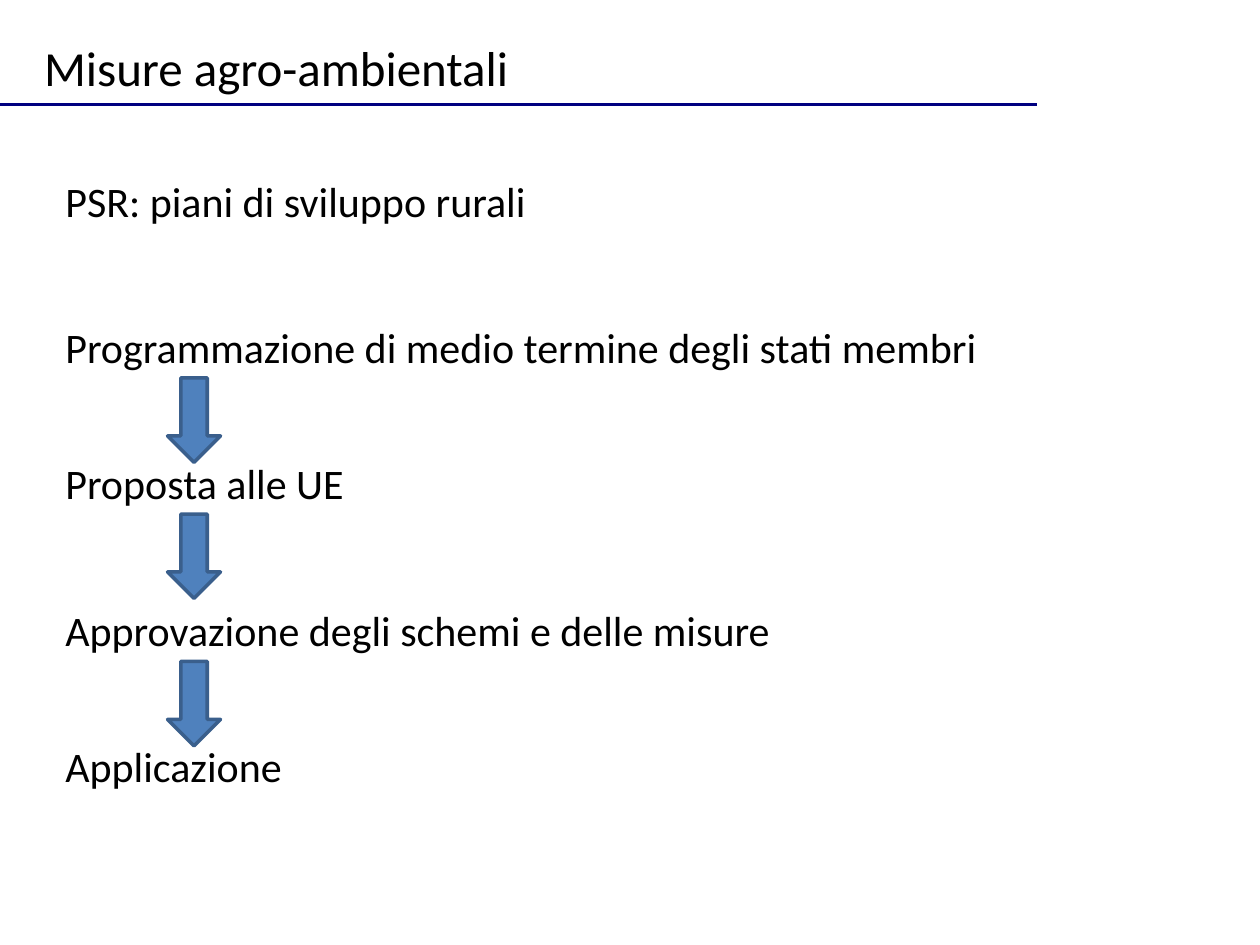
from lxml import etree
from pptx import Presentation
from pptx.dml.color import RGBColor
from pptx.enum.shapes import MSO_CONNECTOR, MSO_SHAPE
from pptx.enum.text import MSO_ANCHOR, PP_ALIGN
from pptx.oxml.ns import qn
from pptx.util import Inches, Pt

STRAIGHT = MSO_CONNECTOR.STRAIGHT
DOWN_ARROW = MSO_SHAPE.DOWN_ARROW
TOP = MSO_ANCHOR.TOP
LEFT = PP_ALIGN.LEFT

TITLE_ONLY_LAYOUT = 5
FONT = "Calibri"
COLOURS = {
    "text": "000000",
    "rule": "000080",
    "arrow": "4F81BD",
    "arrow_edge": "3A5F8C",
}
TEXT_LEFT = 0.42
TEXT_HEIGHT = 0.5
HEADING = ("PSR: piani di sviluppo rurali", 1.34, 8.75)
STEPS = [  # text, top, width
    ("Programmazione di medio termine degli stati membri", 2.5, 8.75),
    ("Proposta alle UE", 3.58, 3.75),
    ("Approvazione degli schemi e delle misure", 4.75, 7.42),
    ("Applicazione", 5.83, 7.42),
]


def colour(name):
    return RGBColor.from_string(COLOURS[name])


def write_text(shape, text, size):
    frame = shape.text_frame
    frame.text = text
    frame.word_wrap = True
    frame.vertical_anchor = TOP
    paragraph = frame.paragraphs[0]
    paragraph.alignment = LEFT
    font = paragraph.runs[0].font
    font.name = FONT
    font.size = Pt(size)
    font.color.rgb = colour("text")


def set_title(slide, text):
    title = slide.shapes.title
    title.left, title.top = Inches(0.25), Inches(0.25)
    title.width, title.height = Inches(8.67), Inches(0.57)
    write_text(title, text, 28)


def add_title_rule(slide):
    rule = slide.shapes.add_connector(
        STRAIGHT, Inches(0), Inches(0.83), Inches(8.23), Inches(0.83))
    rule.line.color.rgb = colour("rule")
    rule.line.width = Pt(2)
    etree.SubElement(rule.line._get_or_add_ln().getparent(), qn("a:effectLst"))


def add_text_line(slide, text, top, width):
    box = slide.shapes.add_textbox(
        Inches(TEXT_LEFT), Inches(top), Inches(width), Inches(TEXT_HEIGHT))
    write_text(box, text, 24)


def add_down_arrow(slide, top):
    arrow = slide.shapes.add_shape(
        DOWN_ARROW, Inches(1.33), Inches(top), Inches(0.42), Inches(0.67))
    arrow.shadow.inherit = False
    arrow.fill.solid()
    arrow.fill.fore_color.rgb = colour("arrow")
    arrow.line.color.rgb = colour("arrow_edge")
    arrow.line.width = Pt(2)


def main():
    presentation = Presentation()
    presentation.slide_width = Inches(10)
    presentation.slide_height = Inches(7.5)
    layout = presentation.slide_layouts[TITLE_ONLY_LAYOUT]
    slide = presentation.slides.add_slide(layout)

    add_title_rule(slide)
    set_title(slide, "Misure agro-ambientali")
    for text, top, width in [HEADING, *STEPS]:
        add_text_line(slide, text, top, width)
    for _, top, _ in STEPS[:-1]:
        add_down_arrow(slide, top + TEXT_HEIGHT)

    presentation.save("out.pptx")


if __name__ == "__main__":
    main()
